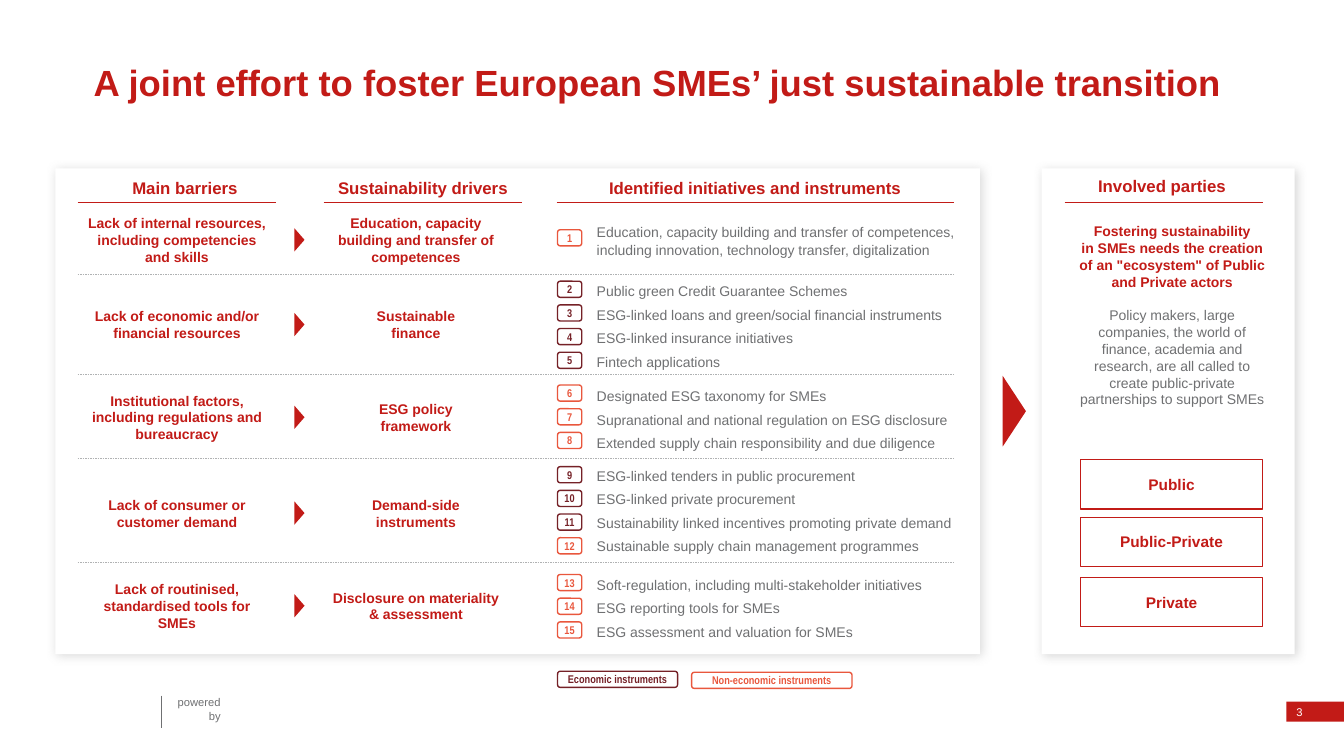
from lxml import etree
from pptx import Presentation
from pptx.dml.color import RGBColor as Rgb
from pptx.enum.dml import MSO_LINE as Dash
from pptx.enum.shapes import MSO_CONNECTOR as Conn, MSO_SHAPE as Shape
from pptx.enum.text import MSO_ANCHOR as Anchor, PP_ALIGN as Align
from pptx.oxml import parse_xml
from pptx.oxml.ns import nsdecls, qn
from pptx.util import Inches, Pt

# Content
TITLE = "A joint effort to foster European SMEs’ just sustainable transition"
# barrier, driver, instruments
ROWS = [
    ("Lack of internal resources, including competencies and skills",
     "Education, capacity building and transfer of competences",
     ["Education, capacity building and transfer of competences, "
      "including innovation, technology transfer, digitalization"]),
    ("Lack of economic and/or financial resources", "Sustainable\nfinance",
     ["Public green Credit Guarantee Schemes",
      "ESG-linked loans and green/social financial instruments",
      "ESG-linked insurance initiatives",
      "Fintech applications"]),
    ("Institutional factors, including regulations and bureaucracy",
     "ESG policy\nframework",
     ["Designated ESG taxonomy for SMEs",
      "Supranational and national regulation on ESG disclosure",
      "Extended supply chain responsibility and due diligence"]),
    ("Lack of consumer or customer demand", "Demand-side\ninstruments",
     ["ESG-linked tenders in public procurement",
      "ESG-linked private procurement",
      "Sustainability linked incentives promoting private demand",
      "Sustainable supply chain management programmes"]),
    ("Lack of routinised, standardised tools for SMEs",
     "Disclosure on materiality & assessment",
     ["Soft-regulation, including multi-stakeholder initiatives",
      "ESG reporting tools for SMEs",
      "ESG assessment and valuation for SMEs"]),
]
ECON = {2, 3, 4, 5, 9, 10, 11}
CLAIM = ("Fostering sustainability\nin SMEs needs the creation of an "
         "\"ecosystem\" of Public and Private actors")
CALL = ("Policy makers, large companies, the world of finance, academia and "
        "research, are all called to create public-private partnerships to "
        "support SMEs")
PARTS = [("Public", 4.56), ("Public-Private", 5.13), ("Private", 5.73)]

# Grid, in inches
# header text, its left, top and width, then the rule's left and right
HEADS = [
    ("Main barriers", 0.69, 1.71, 2.29, 0.77, 2.74),
    ("Sustainability drivers", 3.05, 1.71, 2.29, 3.21, 5.18),
    ("Identified initiatives and instruments", 5.36, 1.71, 4.26, 5.52, 9.46),
    ("Involved parties", 10.22, 1.69, 2.61, 10.56, 12.53),
]
MIDS = [2.38, 3.22, 4.14, 5.09, 6.01]    # middle of each row
LISTS = [2.16, 2.7, 3.74, 4.53, 5.61]    # top of each instrument list
TAGS = [2.28, 2.79, 3.82, 4.63, 5.7]     # top of each first number
CUTS = [2.72, 3.71, 4.55, 5.58]          # dividers between rows
STEP = 0.235
COLS = {"barrier": 0.77, "arrow": 2.97, "driver": 3.14, "tag": 5.53,
        "list": 5.82, "part": 10.72}
HUES = {"red": "C21B17", "grey": "6F7072", "rule": "B0B2B3", "wine": "752127",
        "coral": "E9573D", "white": "FFFFFF", "shade": "808080"}

deck = Presentation()
deck.slide_width, deck.slide_height = Inches(13.33), Inches(7.5)
slide = deck.slides.add_slide(deck.slide_layouts[6])
shapes = slide.shapes


def hue(name):
    return Rgb.from_string(HUES[name])


def write(text, box=None, on=None, size=10, color="red", bold=True, font="Arial",
          align=Align.CENTER, anchor=Anchor.MIDDLE, pad=(0.1, 0.05), gap=None,
          more=False, before=0):
    """Set text in a new box, or on a shape; more adds below what is there."""
    host = on or shapes.add_textbox(*map(Inches, box))
    frame = host.text_frame
    frame.word_wrap = True
    frame.vertical_anchor = anchor
    frame.margin_left = frame.margin_right = Inches(pad[0])
    frame.margin_top = frame.margin_bottom = Inches(pad[1])
    for i, line in enumerate(text.split("\n")):
        para = frame.add_paragraph() if more or i else frame.paragraphs[0]
        para.alignment = align
        if gap:
            para.line_spacing = gap
        if before and not i:
            para.space_before = Pt(before)
        run = para.add_run()
        run.text = line
        run.font.size, run.font.bold, run.font.name = Pt(size), bold, font
        run.font.color.rgb = hue(color)
    return host


def draw(kind, x, y, w, h, fill=None, edge=None, wide=0.75, turn=0):
    item = shapes.add_shape(kind, *map(Inches, (x, y, w, h)))
    item.shadow.inherit = False
    item.rotation = turn
    if fill:
        item.fill.solid()
        item.fill.fore_color.rgb = hue(fill)
    else:
        item.fill.background()
    if edge:
        item.line.color.rgb = hue(edge)
        item.line.width = Pt(wide)
    else:
        item.line.fill.background()
    return item


def rule(x1, y1, x2, y2, color, wide=0.75, dash=None):
    line = shapes.add_connector(Conn.STRAIGHT, *map(Inches, (x1, y1, x2, y2)))
    line.line.color.rgb = hue(color)
    line.line.width = Pt(wide)
    if dash:
        line.line.dash_style = dash
    etree.SubElement(line._element.spPr, qn("a:effectLst"))


def card(x, w):
    item = draw(Shape.RECTANGLE, x, 1.67, w, 4.82, fill="white")
    glow = parse_xml(
        f'<a:outerShdw {nsdecls("a")} blurRad="{Pt(7)}" dist="{Pt(2)}" '
        f'dir="2700000" algn="tl" rotWithShape="0"><a:srgbClr val="{HUES["shade"]}">'
        '<a:alpha val="30000"/></a:srgbClr></a:outerShdw>')
    item._element.spPr.find(qn("a:effectLst")).append(glow)


def arrow(x, y, base, tall):
    """Right-pointing triangle centred on x, y."""
    draw(Shape.ISOSCELES_TRIANGLE, x - base / 2, y - tall / 2, base, tall,
         fill="red", turn=90)


def tag(text, x, y, w, econ):
    tone = "wine" if econ else "coral"
    pill = draw(Shape.ROUNDED_RECTANGLE, x, y, w, 0.16, "white", tone, 1)
    write(text, on=pill, size=8, color=tone, font="Arial Narrow", pad=(0, 0))


# Title and cards
card(0.55, 9.17)
card(10.33, 2.51)
write(TITLE, (0.83, 0.55, 12.03, 0.52), size=26, align=Align.LEFT,
      anchor=Anchor.TOP)

# Column heads
for text, x, y, w, start, end in HEADS:
    write(text, (x, y, w, 0.3), size=12, anchor=Anchor.TOP)
    rule(start, 2.01, end, 2.01, "red")
for y in CUTS:
    rule(0.77, y, 9.46, y, "rule", 0.25, Dash.DASH)

# Rows
count = 0
for (barrier, driver, items), mid, top, first in zip(ROWS, MIDS, LISTS, TAGS):
    for text, col in ((barrier, "barrier"), (driver, "driver")):
        write(text, (COLS[col], mid - 0.31, 1.97, 0.62))
    arrow(COLS["arrow"], mid, 0.23, 0.1)
    write("\n".join(items), (COLS["list"], top, 3.98, STEP * len(items) + 0.1),
          color="grey", bold=False, align=Align.LEFT, anchor=Anchor.TOP,
          pad=(0.1, 0.04), gap=1.4 if len(items) > 1 else 1.1)
    for i in range(len(items)):
        count += 1
        tag(str(count), COLS["tag"], first + i * STEP, 0.24, count in ECON)

# Legend
tag("Economic instruments", COLS["tag"], 6.66, 1.19, True)
tag("Non-economic instruments", 6.86, 6.67, 1.59, False)

# Involved parties
arrow(10.06, 4.08, 0.7, 0.23)
claim = write(CLAIM, (10.55, 2.16, 2.15, 1.95), anchor=Anchor.TOP)
write(CALL, on=claim, color="grey", bold=False, anchor=Anchor.TOP, more=True,
      before=12)
for text, y in PARTS:
    write(text, on=draw(Shape.RECTANGLE, COLS["part"], y, 1.8, 0.49, edge="red"),
          size=11)

# Footer
rule(1.6, 6.9, 1.6, 7.22, "grey")
write("powered\nby", (1.66, 6.9, 0.53, 0.25), size=8, color="grey", bold=False,
      align=Align.RIGHT, anchor=Anchor.TOP, pad=(0, 0))
write("3", on=draw(Shape.RECTANGLE, 12.76, 6.96, 0.57, 0.2, fill="red"), size=8,
      color="white", bold=False, align=Align.LEFT, pad=(0.1, 0))

deck.save("out.pptx")
